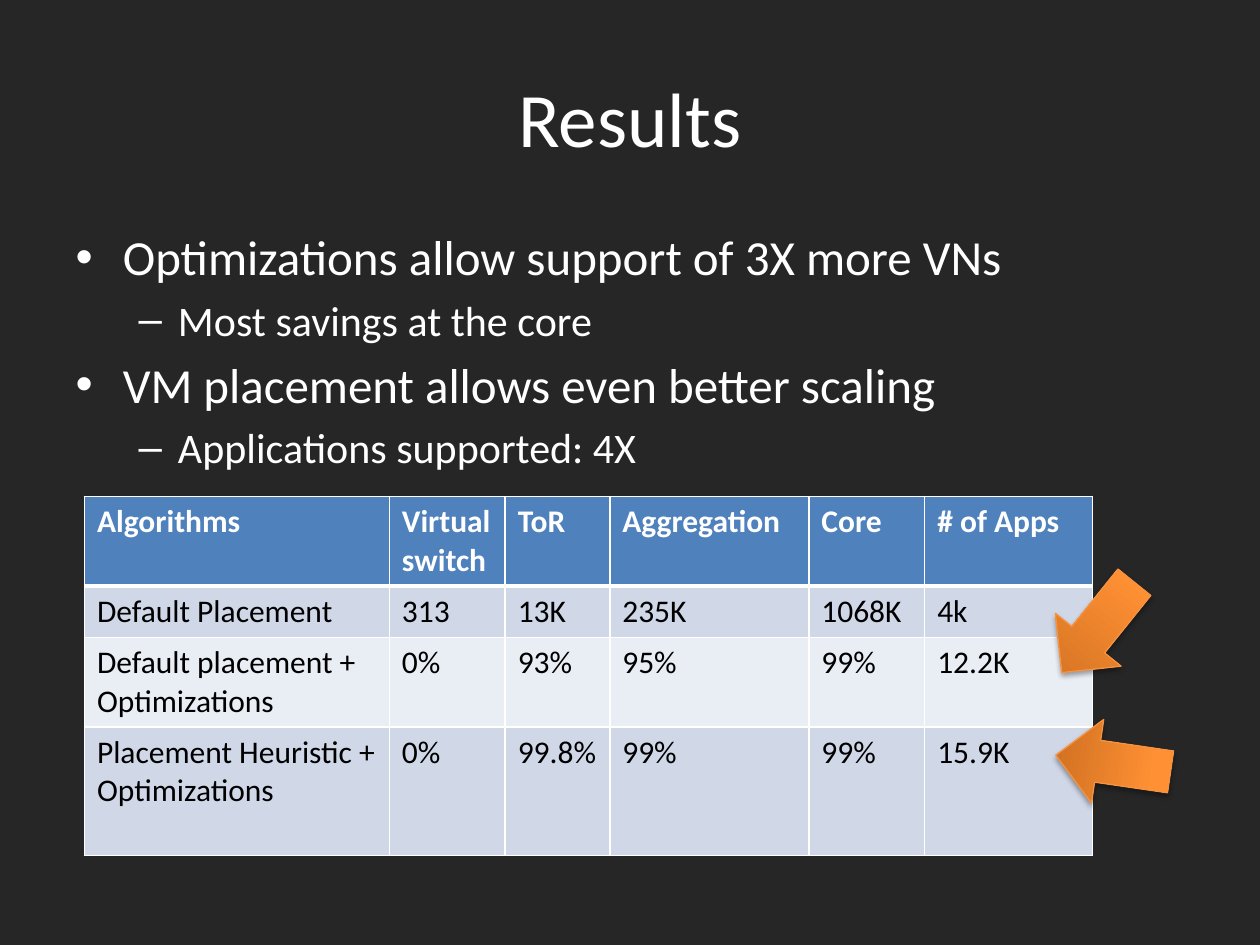
from lxml.etree import SubElement
from pptx import Presentation
from pptx.dml.color import RGBColor
from pptx.enum.shapes import MSO_SHAPE
from pptx.enum.text import MSO_ANCHOR, PP_ALIGN
from pptx.oxml import parse_xml
from pptx.oxml.ns import nsdecls, qn
from pptx.util import Inches, Pt

DARK = RGBColor(0x26, 0x26, 0x26)
WHITE = RGBColor(0xFF, 0xFF, 0xFF)
BLACK = RGBColor(0, 0, 0)
BLUE = RGBColor(0x4F, 0x81, 0xBD)
MIST = RGBColor(0xD0, 0xD8, 0xE8)
PALE = RGBColor(0xE9, 0xED, 0xF4)
EDGE = RGBColor(0xF6, 0x92, 0x40)
RAMP = {
    0: RGBColor(0xCC, 0x6E, 0x20),
    80: RGBColor(0xFF, 0x90, 0x34),
    100: RGBColor(0xFF, 0x91, 0x36),
}
POINTS = [
    (0, "Optimizations allow support of 3X more VNs"),
    (1, "Most savings at the core"),
    (0, "VM placement allows even better scaling"),
    (1, "Applications supported: 4X"),
]
COLS = [2.42, 0.92, 0.83, 1.58, 0.92, 1.33]
TALL = [0.7, 0.41, 0.71, 1.02]
ROWS = [
    ["Algorithms", "Virtual\vswitch", "ToR", "Aggregation", "Core", "# of Apps"],
    ["Default Placement", "313", "13K", "235K", "1068K", "4k"],
    ["Default placement +\nOptimizations", "0%", "93%", "95%", "99%", "12.2K"],
    ["Placement Heuristic +\nOptimizations", "0%", "99.8%", "99%", "99%", "15.9K"],
]


class Deck:
    """Holds the style and the current slide, and adds each kind of element."""

    face = "Calibri"
    sizes = {0: Pt(28), 1: Pt(24)}

    def __init__(self):
        self.show = Presentation()
        self.show.slide_width = Inches(10)
        self.show.slide_height = Inches(7.5)
        self.slide = self.show.slides.add_slide(self.show.slide_layouts[1])
        fill = self.slide.background.fill
        fill.solid()
        fill.fore_color.rgb = DARK

    def place(self, shape, *box):
        names = ("left", "top", "width", "height")
        for name, value in zip(names, box):
            setattr(shape, name, Inches(value))

    def style(self, frame, color, **form):
        for para in frame.paragraphs:
            for run in para.runs:
                run.font.color.rgb = color
                for name, value in {"name": self.face, **form}.items():
                    setattr(run.font, name, value)

    def title(self, text, *box):
        shape = self.slide.shapes.title
        self.place(shape, *box)
        frame = shape.text_frame
        frame.text = text
        frame.vertical_anchor = MSO_ANCHOR.MIDDLE
        frame.paragraphs[0].alignment = PP_ALIGN.CENTER
        self.style(frame, WHITE, size=Pt(44))

    def body(self, points, *box):
        shape = self.slide.placeholders[1]
        self.place(shape, *box)
        frame = shape.text_frame
        frame.text = "\n".join(text for _, text in points)
        self.style(frame, WHITE)
        for para, (level, _) in zip(frame.paragraphs, points):
            para.level = level
            para.runs[0].font.size = self.sizes[level]

    def border(self, cell, widths):
        props = cell._tc.get_or_add_tcPr()
        for side, width in widths.items():
            line = SubElement(props, qn(f"a:ln{side}"), w=str(Pt(width)))
            fill = SubElement(line, qn("a:solidFill"))
            SubElement(fill, qn("a:srgbClr"), val=str(WHITE))

    def table(self, rows, cols, tall, *spot):
        shape = self.slide.shapes.add_table(
            len(rows), len(cols), *map(Inches, (*spot, sum(cols), sum(tall)))
        )
        grid = shape.table
        for col, width in zip(grid.columns, cols):
            col.width = Inches(width)
        for r, row in enumerate(rows):
            grid.rows[r].height = Inches(tall[r])
            head = r == 0
            shade = BLUE if head else (PALE, MIST)[r % 2]
            widths = {"L": 1, "R": 1, "T": 3 if r == 1 else 1, "B": 3 if head else 1}
            for c, text in enumerate(row):
                cell = grid.cell(r, c)
                cell.text = text
                self.style(cell.text_frame, WHITE if head else BLACK,
                           size=Pt(18), bold=head)
                self.border(cell, widths)
                cell.fill.solid()
                cell.fill.fore_color.rgb = shade

    def arrow(self, turn, *box):
        shape = self.slide.shapes.add_shape(MSO_SHAPE.DOWN_ARROW, *map(Inches, box))
        shape.rotation = turn
        shape.line.color.rgb = EDGE
        shape.line.width = Pt(0.75)
        shape.fill.background()
        shape.shadow.inherit = False
        props = shape._element.spPr
        stops = "".join(
            f'<a:gs pos="{pos * 1000}"><a:srgbClr val="{color}"/></a:gs>'
            for pos, color in RAMP.items()
        )
        props.replace(props.find(qn("a:noFill")), parse_xml(
            f'<a:gradFill {nsdecls("a")} rotWithShape="1"><a:gsLst>{stops}</a:gsLst>'
            '<a:lin ang="16200000" scaled="0"/></a:gradFill>'
        ))
        props.find(qn("a:effectLst")).append(parse_xml(
            f'<a:outerShdw {nsdecls("a")} blurRad="{Pt(3.1)}" dist="{Pt(1.8)}" '
            'dir="5400000" rotWithShape="0"><a:srgbClr val="000000">'
            '<a:alpha val="35000"/></a:srgbClr></a:outerShdw>'
        ))


def main():
    deck = Deck()
    deck.title("Results", 0.5, 0.3, 9, 1.25)
    deck.body(POINTS, 0.5, 1.75, 9, 4.95)
    deck.table(ROWS, COLS, TALL, 0.67, 3.94)
    deck.arrow(38.8, 8.38, 4.52, 0.67, 0.92)
    deck.arrow(98.3, 8.5, 5.6, 0.67, 0.92)
    deck.show.save("out.pptx")


if __name__ == "__main__":
    main()
